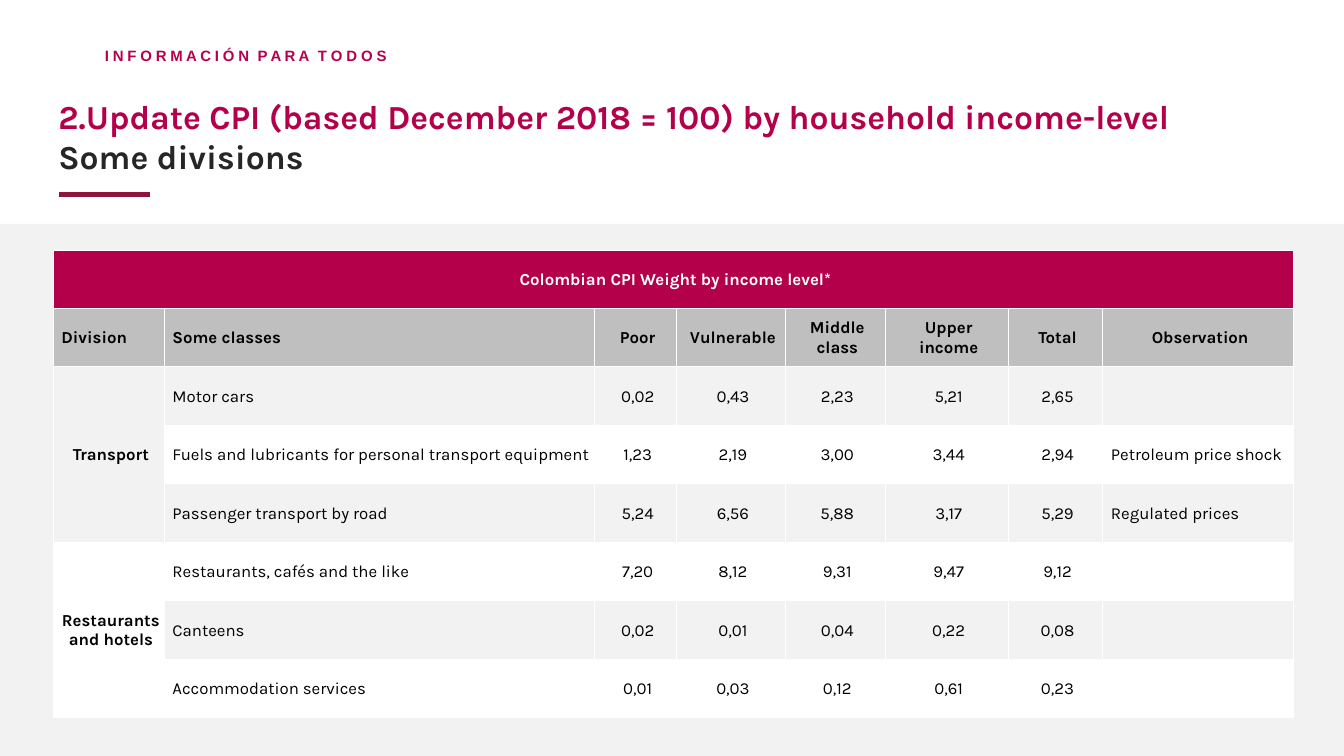
from dataclasses import dataclass

from lxml import etree
from pptx import Presentation
from pptx import util as u
from pptx.dml import color
from pptx.enum import shapes, text
from pptx.oxml import ns

LEFT, MID, JUST = text.PP_ALIGN.LEFT, text.PP_ALIGN.CENTER, text.PP_ALIGN.JUSTIFY


@dataclass(frozen=True)
class Theme:
    """Hold the colours, fonts and type sizes of the slide."""
    brand: str = "B6004C"
    rose: str = "B4004A"
    wine: str = "8D143D"
    ink: str = "262626"
    black: str = "000000"
    white: str = "FFFFFF"
    pale: str = "F2F2F2"
    grey: str = "BFBFBF"
    font: str = "Karla"
    tag_font: str = "Arial"
    tag: float = 10.7
    title: float = 24
    cell: float = 12


@dataclass(frozen=True)
class Style:
    """Describe the look of a run."""
    size: float
    tint: str
    bold: bool = True
    font: str = "Karla"
    space: int = 0


@dataclass(frozen=True)
class Item:
    """Describe one class of goods with its weights."""
    name: str
    weights: str
    note: str = ""


@dataclass(frozen=True)
class Group:
    """Describe a division and its classes."""
    name: str
    items: tuple[Item, ...]


THEME = Theme()
HEADS = ("Division", "Some classes", "Poor", "Vulnerable", "Middle\nclass",
         "Upper income", "Total", "Observation")
WIDTHS = (1.1, 4.27, 0.81, 1.08, 0.99, 1.22, 0.94, 1.89)
HEIGHT = 0.58
GROUPS = (
    Group("Transport", (
        Item("Motor cars", "0,02 0,43 2,23 5,21 2,65"),
        Item("Fuels and lubricants for personal transport equipment",
             "1,23 2,19 3,00 3,44 2,94", "Petroleum price shock"),
        Item("Passenger transport by road", "5,24 6,56 5,88 3,17 5,29", "Regulated prices"),
    )),
    Group("Restaurants and hotels", (
        Item("Restaurants, cafés and the like", "7,20 8,12 9,31 9,47 9,12"),
        Item("Canteens", "0,02 0,01 0,04 0,22 0,08"),
        Item("Accommodation services", "0,01 0,03 0,12 0,61 0,23"),
    )),
)


def add_run(para, words: str, style: Style) -> None:
    """Add one styled run to a paragraph."""
    run = para.add_run()
    run.text = words
    run.font.name, run.font.size = style.font, u.Pt(style.size)
    run.font.bold = style.bold
    run.font.color.rgb = color.RGBColor.from_string(style.tint)
    if style.space:
        run._r.get_or_add_rPr().set("spc", str(style.space))


def add_box(slide, left: float, top: float, width: float, height: float):
    """Add a wrapping text box and return its frame."""
    frame = slide.shapes.add_textbox(*map(u.Inches, (left, top, width, height))).text_frame
    frame.word_wrap = True
    return frame


def add_tag(slide) -> None:
    """Draw the spaced motto at the top."""
    frame = add_box(slide, 1.02, 0.37, 4.1, 0.23)
    frame.margin_left = frame.margin_right = frame.margin_bottom = 0
    frame.margin_top = u.Inches(0.04)
    para = frame.paragraphs[0]
    para.alignment, para.line_spacing = JUST, 1.3
    props = para._p.get_or_add_pPr()
    props.set("marL", str(u.Inches(0.04)))
    props.set("indent", str(u.Inches(-0.02)))
    for spot, word in enumerate(("INFORMACIÓN", "PARA", "TODOS")):
        if spot:
            add_run(para, " ", Style(THEME.tag, THEME.brand, font=THEME.tag_font, space=300))
        add_run(para, " ".join(word),
                Style(THEME.tag, THEME.brand, font=THEME.tag_font, space=-10))


def add_title(slide) -> None:
    """Draw the two title lines."""
    frame = add_box(slide, 0.48, 0.9, 11.7, 0.91)
    add_run(frame.paragraphs[0],
            "2.Update CPI (based December 2018 = 100) by household income-level",
            Style(THEME.title, THEME.rose))
    add_run(frame.add_paragraph(), "Some divisions", Style(THEME.title, THEME.ink))


def add_panel(slide) -> None:
    """Draw the pale panel behind the table."""
    panel = slide.shapes.add_shape(
        shapes.MSO_SHAPE.RECTANGLE, *map(u.Inches, (0, 2.22, 13.33, 5.28)))
    panel.shadow.inherit = False
    panel.fill.solid()
    panel.fill.fore_color.rgb = color.RGBColor.from_string(THEME.pale)
    panel.line.fill.background()


def add_rule(slide) -> None:
    """Draw the short rule under the title."""
    rule = slide.shapes.add_connector(
        shapes.MSO_CONNECTOR.STRAIGHT, *map(u.Inches, (0.59, 1.93, 1.49, 1.93)))
    rule.line.color.rgb = color.RGBColor.from_string(THEME.wine)
    rule.line.width = u.Pt(3)
    etree.SubElement(rule._element.spPr, ns.qn("a:effectLst"))


def frame_cell(cell, fill: str) -> None:
    """Set the borders, fill and insets of a cell."""
    props = cell._tc.get_or_add_tcPr()
    for side in ("lnL", "lnR", "lnT", "lnB"):
        line = etree.SubElement(props, ns.qn(f"a:{side}"), w=str(u.Pt(0.75)))
        solid = etree.SubElement(line, ns.qn("a:solidFill"))
        etree.SubElement(solid, ns.qn("a:srgbClr"), val=THEME.white)
    if fill:
        cell.fill.solid()
        cell.fill.fore_color.rgb = color.RGBColor.from_string(fill)
    else:
        cell.fill.background()
    cell.margin_left, cell.margin_top = u.Inches(0.08), u.Inches(0.01)
    cell.margin_right, cell.margin_bottom = u.Inches(0.04), 0
    cell.vertical_anchor = text.MSO_ANCHOR.MIDDLE


def write(cell, words: str, align, bold: bool = True, tint: str = THEME.black) -> None:
    """Write each line of words as a paragraph of a cell."""
    for spot, line in enumerate(words.split("\n") if words else ()):
        frame = cell.text_frame
        para = frame.add_paragraph() if spot else frame.paragraphs[0]
        para.alignment = align
        add_run(para, line, Style(THEME.cell, tint, bold))


def add_grid(slide) -> None:
    """Draw the table of weights."""
    count = 2 + sum(len(group.items) for group in GROUPS)
    grid = slide.shapes.add_table(
        count, len(WIDTHS),
        *map(u.Inches, (0.53, 2.48, sum(WIDTHS), count * HEIGHT))).table
    grid.first_row = grid.horz_banding = False
    for col, width in zip(grid.columns, WIDTHS):
        col.width = u.Inches(width)
    for row in range(count):
        fill = (THEME.rose, THEME.grey)[row] if row < 2 else (THEME.white if row % 2 else "")
        for col in range(len(WIDTHS)):
            frame_cell(grid.cell(row, col), fill)
    grid.cell(0, 0).merge(grid.cell(0, len(WIDTHS) - 1))
    write(grid.cell(0, 0), "Colombian CPI Weight by income level*", MID, tint=THEME.white)
    for col, head in enumerate(HEADS):
        write(grid.cell(1, col), head, LEFT if col < 2 else MID)
    row = 2
    for group in GROUPS:
        grid.cell(row, 0).merge(grid.cell(row + len(group.items) - 1, 0))
        write(grid.cell(row, 0), group.name, MID)
        for item in group.items:
            values = (item.name, *item.weights.split(), item.note)
            for col, value in enumerate(values, 1):
                write(grid.cell(row, col), value, MID if 1 < col < 7 else LEFT, False)
            row += 1


def main() -> None:
    """Build the slide and save it."""
    deck = Presentation()
    deck.slide_width, deck.slide_height = u.Inches(13.33), u.Inches(7.5)
    slide = deck.slides.add_slide(deck.slide_layouts[6])
    for draw in (add_tag, add_panel, add_title, add_grid, add_rule):
        draw(slide)
    deck.save("out.pptx")


if __name__ == "__main__":
    main()
